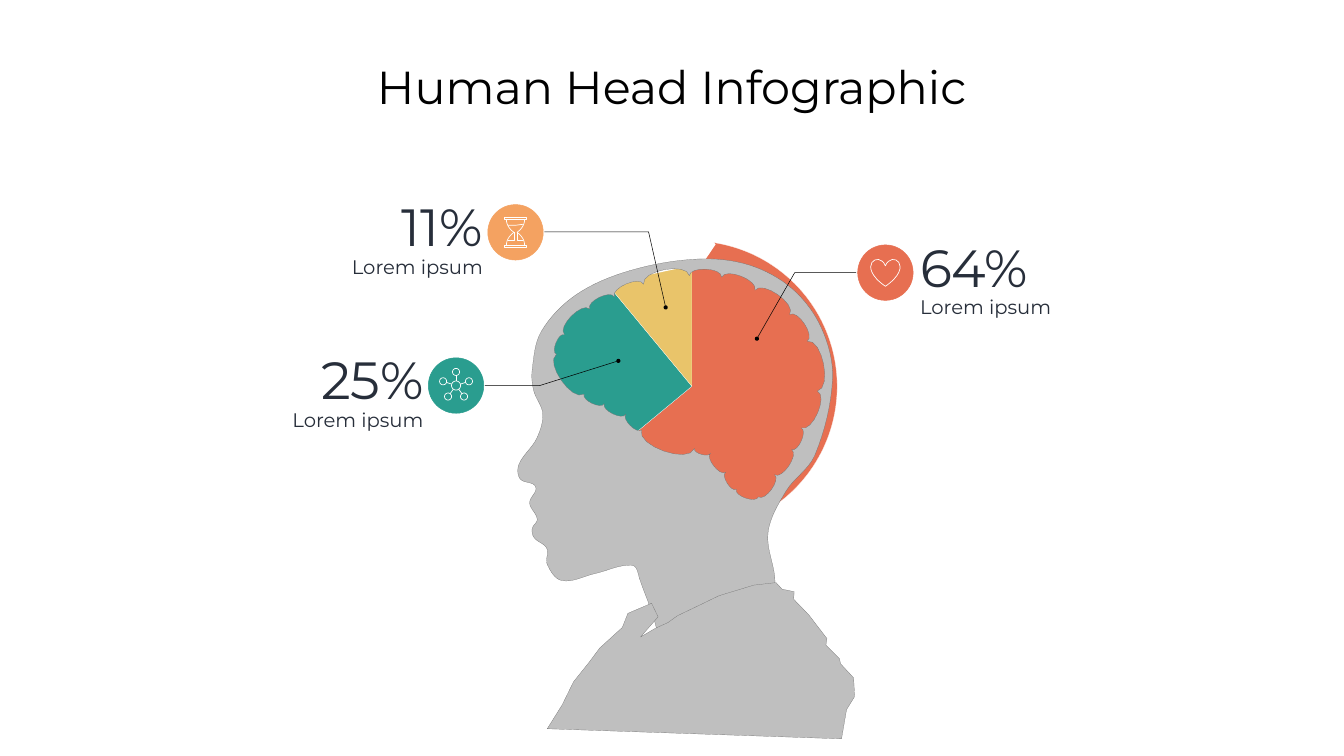
from math import cos, hypot, pi, sin

from lxml.etree import SubElement
from pptx import Presentation
from pptx.chart.data import CategoryChartData
from pptx.dml.color import RGBColor
from pptx.enum.chart import XL_CHART_TYPE
from pptx.enum.shapes import MSO_SHAPE
from pptx.enum.text import MSO_ANCHOR, MSO_AUTO_SIZE, PP_ALIGN
from pptx.oxml.ns import qn
from pptx.util import Inches, Pt

FONT = "Montserrat"
BLACK = RGBColor(0, 0, 0)
WHITE = RGBColor(255, 255, 255)
INK = RGBColor(0x27, 0x2E, 0x3A)
GREY = RGBColor(0xBF, 0xBF, 0xBF)
EDGE = RGBColor(0x66, 0x66, 0x66)
CORAL = RGBColor(0xE7, 0x6F, 0x51)
TEAL = RGBColor(0x2A, 0x9D, 0x8F)
YELLOW = RGBColor(0xE9, 0xC4, 0x6A)
ORANGE = RGBColor(0xF4, 0xA2, 0x61)

TITLE = "Human Head Infographic"
SHARES = [("1", 64, CORAL), ("2", 25, TEAL), ("3", 11, YELLOW)]
CALLOUTS = [
    ("64%", "Lorem ipsum", (18.16, 4.79), PP_ALIGN.LEFT,
     [(16.99, 5.41), (15.77, 5.41), (15.02, 6.72)], (17.02, 4.86), CORAL, "heart"),
    ("11%", "Lorem ipsum", (5.68, 3.98), PP_ALIGN.RIGHT,
     [(10.8, 4.6), (12.87, 4.6), (13.21, 6.1)], (9.68, 4.06), ORANGE, "hourglass"),
    ("25%", "Lorem ipsum", (4.5, 7.02), PP_ALIGN.RIGHT,
     [(9.62, 7.65), (10.71, 7.65), (12.27, 7.16)], (8.5, 7.1), TEAL, "network"),
]

FACE_MASK = [
    (13.95, 5.22), (12.2, 5.6), (11.08, 6.28), (10.67, 7.01), (10.67, 7.92), (11.03, 8.81),
    (11.25, 10.36), (12.56, 10.46), (13.16, 12.34), (12.43, 11.72), (11.45, 11.99),
    (10.72, 11.61), (10.08, 9.5), (10.47, 5.35), (13.89, 4.51), (14.2, 4.85)]
PROFILE = [
    (16.52, 7.52), (16.3, 6.51), (15.72, 5.73), (14.87, 5.26), (13.85, 5.14), (12.5, 5.37),
    (11.43, 5.85), (10.74, 6.58), (10.56, 7.34), (10.59, 7.75), (10.77, 8.21), (10.65, 8.7),
    (10.3, 9.21), (10.32, 9.5), (10.63, 9.66), (10.51, 9.98), (10.66, 10.3), (10.56, 10.49),
    (10.6, 10.67), (10.85, 10.88), (10.86, 11.2), (11.15, 11.52), (11.81, 11.38), (12.55, 11.22),
    (12.69, 11.48), (13.06, 12.76), (12.73, 13.16), (12.99, 13.58), (15.23, 11.83), (15.38, 11.56),
    (15.24, 10.57), (15.6, 9.74), (16.17, 9.03)]
BRAIN_FOLDS = [
    (15.37, 9.42), (15.05, 9.86), (14.61, 9.71), (14.4, 9.37), (14.1, 8.99), (13.78, 8.9),
    (12.73, 8.53), (12.42, 8.22), (11.99, 8.01), (11.59, 7.82), (11.04, 7.03), (11.2, 6.64),
    (11.7, 6.13), (12.19, 5.89), (12.77, 5.64), (13.68, 5.47), (14.32, 5.5), (14.98, 5.76),
    (15.67, 6.24), (16.02, 6.77), (16.22, 7.76), (15.9, 8.49), (15.71, 8.92)]
SHOULDERS = [
    (15.52, 11.69), (15.4, 11.56), (14.96, 11.61), (14.27, 11.82), (13.44, 12.22), (13.26, 12.35),
    (13, 12.47), (12.71, 12.64), (13.06, 12.24), (12.93, 11.97), (12.46, 12.17), (12.35, 12.45),
    (11.9, 12.86), (11.7, 13.13), (11.38, 13.53), (11.16, 13.98), (10.86, 14.46), (16.7, 14.66),
    (16.8, 14.08), (16.96, 13.82), (16.94, 13.45), (16.68, 13.17), (16.66, 13.07), (16.39, 12.8),
    (16.41, 12.67), (16.05, 12.2), (15.75, 11.89), (15.76, 11.74)]


def bezier(start, first, second, end, steps=8):
    for step in range(steps):
        t = step / steps
        weights = ((1 - t) ** 3, 3 * t * (1 - t) ** 2, 3 * t * t * (1 - t), t ** 3)
        yield tuple(sum(w * point[axis] for w, point in zip(weights, (start, first, second, end)))
                    for axis in (0, 1))


def smooth(points):
    curve = []
    for i, start in enumerate(points):
        before, end, after = (points[(i + step) % len(points)] for step in (-1, 1, 2))
        reach = hypot(end[0] - start[0], end[1] - start[1]) / 3
        out = reach / hypot(end[0] - before[0], end[1] - before[1])
        back = reach / hypot(after[0] - start[0], after[1] - start[1])
        first = [s + out * (e - b) for s, e, b in zip(start, end, before)]
        second = [e - back * (a - s) for e, a, s in zip(end, after, start)]
        curve += bezier(start, first, second, end)
    return curve


def scallop(points, bulge=0.3):
    curve = []
    for start, end in zip(points, points[1:] + points[:1]):
        dx, dy = end[0] - start[0], end[1] - start[1]
        first, second = ((x + dy * bulge, y - dx * bulge) for x, y in (start, end))
        curve += bezier(start, first, second, end)
    return curve


def ring(x, y, radius, steps=24):
    angles = [2 * pi * step / steps for step in range(steps + 1)]
    return [(x + radius * cos(a), y + radius * sin(a)) for a in angles]


def network(x, y, hub=0.09, node=0.07, reach=0.27):
    contours = [ring(x, y, hub)]
    for arm in range(5):
        angle = 2 * pi * arm / 5 - pi / 2
        inner, outer, center = ((x + d * cos(angle), y + d * sin(angle))
                                for d in (hub, reach - node, reach))
        contours += [[inner, outer], ring(*center, node)]
    return contours


def hourglass(x, y, half=0.22, bar=0.04, height=0.29):
    contours = []
    for end in (-1, 1):
        edge, inside = y + end * height, y + end * (height - bar)
        contours.append([(x - half, edge), (x + half, edge), (x + half, inside),
                         (x - half, inside), (x - half, edge)])
        for side in (-1, 1):
            rim, neck = x + side * 0.18, x + side * 0.03
            contours.append([*bezier((rim, inside), (rim, y + end * 0.13),
                                     (x + side * 0.09, y + end * 0.04), (neck, y)), (neck, y)])
    contours.append([(x - 0.15, y - 0.14), (x, y - 0.14), (x + 0.15, y - 0.16)])
    for side in (-1, 1):
        contours.append([(x + side * 0.03, y), (x + side * 0.03, y + 0.15),
                         (x + side * 0.15, y + 0.15)])
    return contours


def paint(shape, fill=None, line=None, width=0.75):
    shape.shadow.inherit = False
    for part, color in ((shape.fill, fill), (shape.line.fill, line)):
        if color is None:
            part.background()
        else:
            part.solid()
            part.fore_color.rgb = color
    if line is not None:
        shape.line.width = Pt(width)


def add_outline(slide, contours, closed, **style):
    first, *others = [[(Inches(x), Inches(y)) for x, y in contour] for contour in contours]
    builder = slide.shapes.build_freeform(*first[0], scale=1.0)
    builder.add_line_segments(first[1:], close=closed)
    for points in others:
        builder.move_to(*points[0])
        builder.add_line_segments(points[1:], close=closed)
    outline = builder.convert_to_shape()
    paint(outline, **style)
    return outline


def add_icon(slide, icon, x, y):
    if icon == "heart":
        box = map(Inches, (x - 0.29, y - 0.27, 0.58, 0.54))
        paint(slide.shapes.add_shape(MSO_SHAPE.HEART, *box), line=WHITE, width=1)
    else:
        contours = network(x, y) if icon == "network" else hourglass(x, y)
        add_outline(slide, contours, False, line=WHITE, width=1)


def add_text(slide, box, lines, align, color, spacing=None):
    frame = slide.shapes.add_textbox(*map(Inches, box)).text_frame
    frame.word_wrap = True
    frame.text = "\n".join(text for text, _ in lines)
    for paragraph, (_, size) in zip(frame.paragraphs, lines):
        paragraph.alignment = align
        paragraph.line_spacing = spacing
        font = paragraph.runs[0].font
        font.name, font.size, font.color.rgb = FONT, Pt(size), color
    return frame


def add_pie(slide):
    data = CategoryChartData()
    data.categories = [name for name, _, _ in SHARES]
    data.add_series("Series 1", [value for _, value, _ in SHARES])
    box = map(Inches, (9.08, 4.6, 9.3, 6.07))
    pie = slide.shapes.add_chart(XL_CHART_TYPE.PIE, *box, data).chart
    pie.has_title = pie.has_legend = False
    pie.font.name, pie.font.size, pie.font.color.rgb = FONT, Pt(10), BLACK
    plot = pie.plots[0]
    plot.vary_by_categories = True
    for index, (_, _, color) in enumerate(SHARES):
        style = plot.series[0].points[index].format
        style.fill.solid()
        style.fill.fore_color.rgb = color
        style.line.color.rgb, style.line.width = WHITE, Pt(0.25)
    area = pie.element.find(".//" + qn("c:plotArea"))
    for old in area.findall(qn("c:layout")):
        area.remove(old)
    layout = area.makeelement(qn("c:layout"))
    area.insert(0, layout)
    manual = SubElement(layout, qn("c:manualLayout"))
    for tag, value in (("layoutTarget", "inner"), ("xMode", "edge"), ("yMode", "edge"),
                       ("x", "0.19"), ("y", "0.03"), ("w", "0.62"), ("h", "0.95")):
        SubElement(manual, qn("c:" + tag), val=value)


deck = Presentation()
deck.slide_width, deck.slide_height = Inches(26.67), Inches(15)
slide = deck.slides.add_slide(deck.slide_layouts[6])
title = add_text(slide, (1.83, 0.8, 23, 1.82), [(TITLE, 66)], PP_ALIGN.CENTER, BLACK)
title.vertical_anchor = MSO_ANCHOR.MIDDLE
add_pie(slide)
add_outline(slide, [FACE_MASK], True, fill=WHITE)
for contours in ([smooth(PROFILE), scallop(BRAIN_FOLDS)], [SHOULDERS]):
    add_outline(slide, contours, True, fill=GREY, line=EDGE, width=0.25)
for share, label, corner, align, route, (left, top), color, icon in CALLOUTS:
    frame = add_text(slide, (*corner, 4, 1.6), [(share, 74.7), (label, 28)], align, INK, 0.87)
    frame.auto_size = MSO_AUTO_SIZE.SHAPE_TO_FIT_TEXT
    leader = add_outline(slide, [route], False, line=BLACK)
    SubElement(leader.line._get_or_add_ln(), qn("a:tailEnd"), type="oval")
    badge = slide.shapes.add_shape(MSO_SHAPE.OVAL, *map(Inches, (left, top, 1.1, 1.1)))
    paint(badge, fill=color, line=color)
    add_icon(slide, icon, left + 0.55, top + 0.55)
deck.save("out.pptx")
